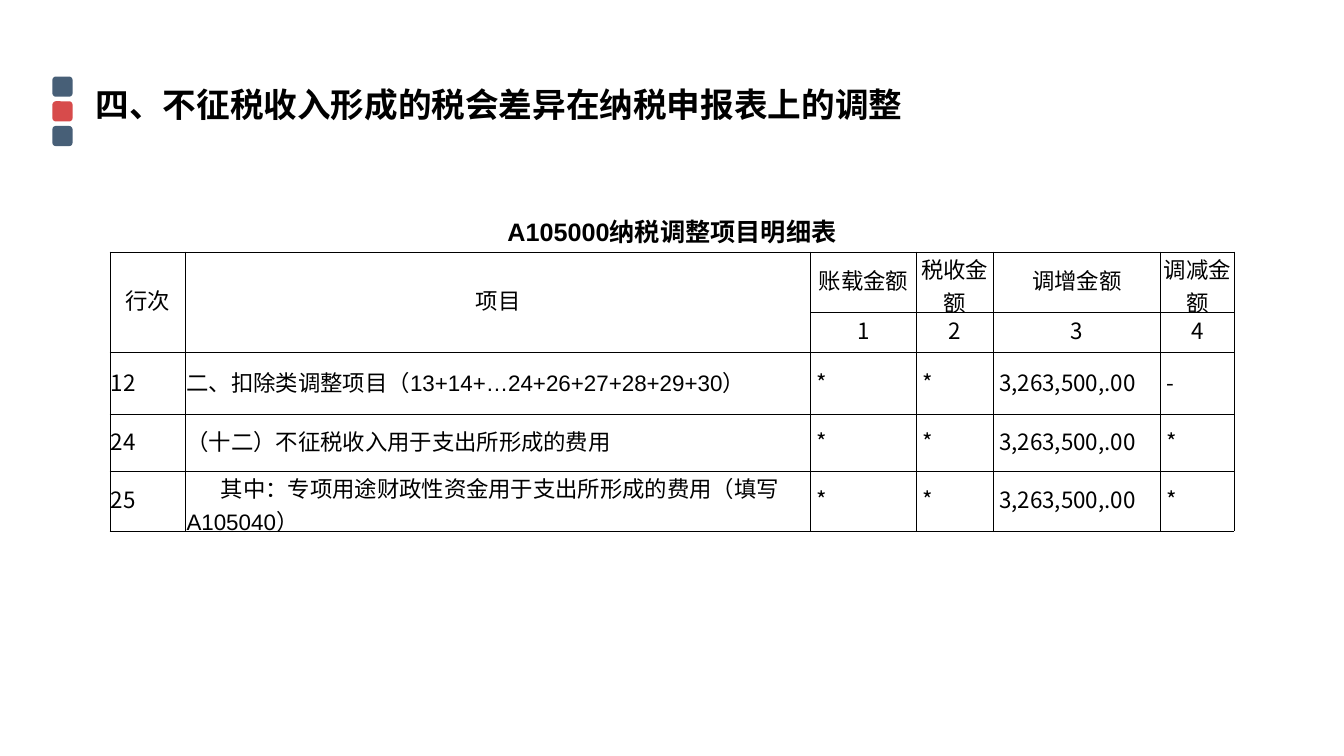
"""Build the slide on tax adjustments for non-taxable income."""
from lxml import etree
from pptx import Presentation
from pptx.dml.color import RGBColor
from pptx.enum.shapes import MSO_SHAPE
from pptx.enum.text import MSO_ANCHOR, PP_ALIGN
from pptx.oxml.ns import qn
from pptx.util import Inches, Pt

ROUNDED = MSO_SHAPE.ROUNDED_RECTANGLE
MIDDLE = MSO_ANCHOR.MIDDLE
LEFT, CENTER = PP_ALIGN.LEFT, PP_ALIGN.CENTER

COLUMNS = [0.75, 6.2, 1.05, 0.76, 1.66, 0.73]
ROWS = [0.4, 0.4, 0.4, 0.4, 0.62, 0.56, 0.47]
HEADERS = ["行次", "项目", "账载金额", "税收金额", "调增金额", "调减金额"]
NUMBERS = ["", "", "1", "2", "3", "4"]
ENTRIES = [
    ["12", "二、扣除类调整项目（13+14+…24+26+27+28+29+30）", "*", "*", "3,263,500,.00", "-"],
    ["24", "（十二）不征税收入用于支出所形成的费用", "*", "*", "3,263,500,.00", "*"],
    ["25", "其中：专项用途财政性资金用于支出所形成的费用（填写A105040）", "*", "*", "3,263,500,.00", "*"],
]


def color(value):
    return RGBColor.from_string(value)


class Page:
    ink = "000000"
    heading_font = "Roboto"
    label_font = "Arial"
    figure_font = "Noto Sans CJK SC"

    def __init__(self, deck):
        self.slide = deck.slides.add_slide(deck.slide_layouts[6])

    def style(self, paragraph, font, size, bold=False):
        paragraph.font.name = font
        paragraph.font.size = Pt(size)
        paragraph.font.bold = bold
        paragraph.font.color.rgb = color(self.ink)

    def marker(self, top, fill):
        shape = self.slide.shapes.add_shape(ROUNDED, Inches(0.52), Inches(top), Inches(0.2), Inches(0.2))
        shape.shadow.inherit = False
        shape.fill.solid()
        shape.fill.fore_color.rgb = color(fill)
        shape.line.fill.background()

    def heading(self, text):
        box = self.slide.shapes.add_textbox(Inches(0.85), Inches(0.78), Inches(9.61), Inches(0.5))
        box.text_frame.word_wrap = True
        paragraph = box.text_frame.paragraphs[0]
        paragraph.text = text
        self.style(paragraph, self.heading_font, 24, True)

    def table(self):
        frame = self.slide.shapes.add_table(
            len(ROWS), len(COLUMNS), Inches(1.09), Inches(1.7), Inches(sum(COLUMNS)), Inches(sum(ROWS)))
        table = frame.table
        table.first_row = table.horz_banding = False
        for column, width in zip(table.columns, COLUMNS):
            column.width = Inches(width)
        for row, height in zip(table.rows, ROWS):
            row.height = Inches(height)
        return table

    def cell(self, cell, text, font, size=16, bold=False, align=CENTER, margin=0, indent=0):
        cell.margin_left = cell.margin_right = cell.margin_top = Inches(0.01)
        cell.margin_bottom = Inches(0.05)
        cell.vertical_anchor = MIDDLE
        paragraph = cell.text_frame.paragraphs[0]
        paragraph.text = text
        paragraph.alignment = align
        properties = paragraph._p.get_or_add_pPr()
        properties.set("marL", str(Inches(margin)))
        properties.set("indent", str(Inches(indent)))
        self.style(paragraph, font, size, bold)

    def borders(self, cell, sides):
        cell.fill.background()
        properties = cell._tc.get_or_add_tcPr()
        for place, side in enumerate(["L", "R", "T", "B"]):
            line = etree.Element(qn("a:ln" + side), w=str(Pt(0.5)))
            if side in sides:
                fill = etree.SubElement(line, qn("a:solidFill"))
                etree.SubElement(fill, qn("a:srgbClr"), val=self.ink)
            else:
                etree.SubElement(line, qn("a:noFill"))
            properties.insert(place, line)


def main():
    deck = Presentation()
    deck.slide_width, deck.slide_height = Inches(13.33), Inches(7.5)
    page = Page(deck)
    for index, fill in enumerate(["475F77", "D74B4B", "475F77"]):
        page.marker(0.76 + index * 0.245, fill)
    page.heading("四、不征税收入形成的税会差异在纳税申报表上的调整")

    table = page.table()
    for row, sides in enumerate(["", "B"] + ["LRTB"] * 5):
        for column in range(len(COLUMNS)):
            page.borders(table.cell(row, column), sides)
    table.cell(1, 0).merge(table.cell(1, 5))
    page.cell(table.cell(1, 0), "A105000纳税调整项目明细表", page.label_font, 18, True)
    for column, (header, number) in enumerate(zip(HEADERS, NUMBERS)):
        page.cell(table.cell(2, column), header, page.label_font)
        if number:
            page.cell(table.cell(3, column), number, page.figure_font)
        else:
            table.cell(2, column).merge(table.cell(3, column))
    for row, entry in enumerate(ENTRIES, 4):
        for column, text in enumerate(entry):
            font = page.label_font if column == 1 else page.figure_font
            margin = 0.05 if column > 1 else 0
            indent = 0.34 if (row, column) == (6, 1) else 0
            page.cell(table.cell(row, column), text, font, align=LEFT, margin=margin, indent=indent)
    deck.save("out.pptx")


if __name__ == "__main__":
    main()
